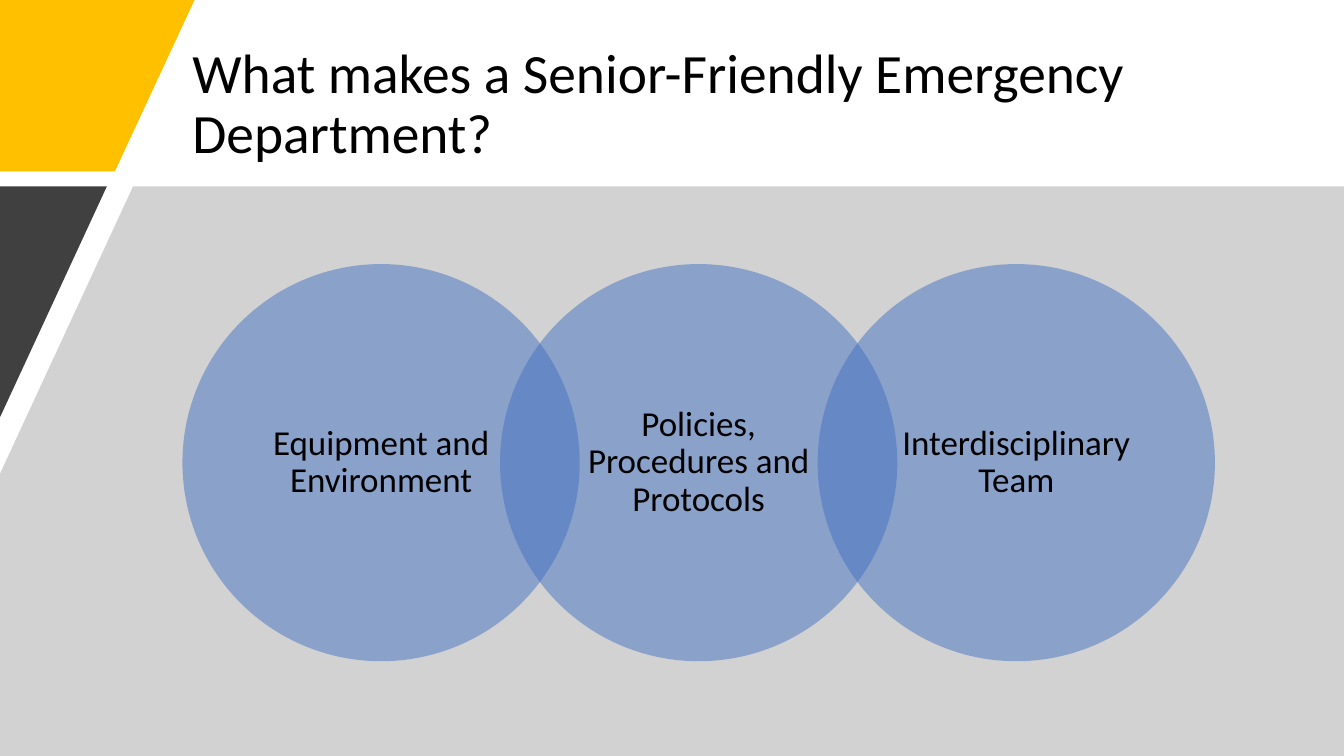
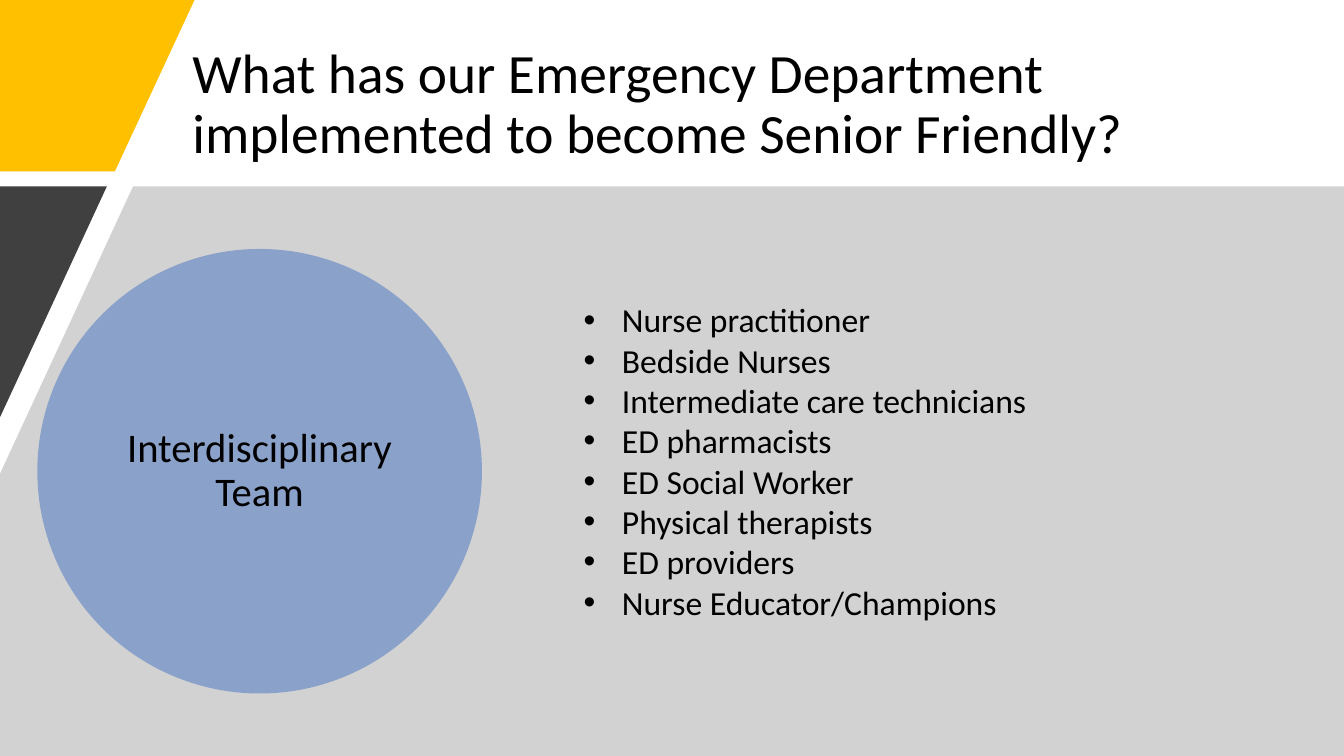
from dataclasses import dataclass

from pptx import Presentation
from pptx.dml.color import RGBColor
from pptx.enum.shapes import MSO_SHAPE
from pptx.enum.text import MSO_ANCHOR as Anchor, PP_ALIGN as Align
from pptx.oxml.ns import qn
from pptx.oxml.xmlchemy import OxmlElement
from pptx.shapes.autoshape import Shape
from pptx.slide import Slide
from pptx.text.text import _Paragraph as Paragraph
from pptx.util import Pt

EMU_PER_PX = 9144
WIDTH, HEIGHT = 1333, 750
FONT = "Calibri"
COLORS = {
    "accent": "FFC000",
    "panel": "A6A6A6",
    "wedge": "404040",
    "circle": "4472C4",
    "text": "000000",
}
BAND_TOP = 185
BULLET_INDENT = 38


@dataclass(frozen=True)
class Band:
    color: str
    points: tuple[tuple[int, int], ...]
    opacity: int = 100


@dataclass(frozen=True)
class Circle:
    text: str
    left: int
    top: int
    diameter: int
    font_size: int
    inset_x: int
    inset_y: int


BANDS = (
    Band("accent", ((0, 0), (193, 0), (114, 170), (0, 170))),
    Band("panel", ((132, BAND_TOP), (WIDTH, BAND_TOP), (WIDTH, HEIGHT), (0, HEIGHT), (0, 470)), 50),
    Band("wedge", ((0, BAND_TOP), (106, BAND_TOP), (0, 414))),
)
ELEMENTS = ("Equipment and Environment", "Policies, Procedures and Protocols", "Interdisciplinary Team")
TEAM = (
    "Nurse practitioner",
    "Bedside Nurses",
    "Intermediate care technicians",
    "ED pharmacists",
    "ED Social Worker",
    "Physical therapists",
    "ED providers",
    "Nurse Educator/Champions",
)


def px(length: int) -> int:
    return length * EMU_PER_PX


def paint(shape: Shape, color: str, opacity: int = 100) -> None:
    shape.shadow.inherit = False
    shape.line.fill.background()
    shape.fill.solid()
    shape.fill.fore_color.rgb = RGBColor.from_string(COLORS[color])
    if opacity < 100:
        alpha = OxmlElement("a:alpha")
        alpha.set("val", str(opacity * 1000))
        next(shape.element.spPr.iter(qn("a:srgbClr"))).append(alpha)


def style_paragraph(paragraph: Paragraph, text: str, size: float, line_spacing: float = 1.0) -> None:
    paragraph.text = text
    paragraph.line_spacing = line_spacing
    paragraph.font.name = FONT
    paragraph.font.size = Pt(size)
    paragraph.font.color.rgb = RGBColor.from_string(COLORS["text"])


def add_band(slide: Slide, band: Band) -> None:
    start, *rest = band.points
    builder = slide.shapes.build_freeform(*start, scale=EMU_PER_PX)
    builder.add_line_segments(rest, close=True)
    paint(builder.convert_to_shape(), band.color, band.opacity)


def add_title(slide: Slide, text: str) -> None:
    frame = slide.shapes.add_textbox(px(181), px(40), px(1024), px(130)).text_frame
    frame.word_wrap = True
    frame.vertical_anchor = Anchor.MIDDLE
    style_paragraph(frame.paragraphs[0], text, 39.6, 0.9)


def add_circle(slide: Slide, circle: Circle) -> None:
    diameter = px(circle.diameter)
    shape = slide.shapes.add_shape(MSO_SHAPE.OVAL, px(circle.left), px(circle.top), diameter, diameter)
    paint(shape, "circle", 50)
    frame = shape.text_frame
    frame.word_wrap = True
    frame.vertical_anchor = Anchor.MIDDLE
    frame.margin_left = frame.margin_right = px(circle.inset_x)
    frame.margin_top = frame.margin_bottom = px(circle.inset_y)
    paragraph = frame.paragraphs[0]
    style_paragraph(paragraph, circle.text, circle.font_size, 0.9)
    paragraph.alignment = Align.CENTER


def add_bullet(paragraph: Paragraph) -> None:
    properties = paragraph._p.get_or_add_pPr()
    properties.set("marL", str(px(BULLET_INDENT)))
    properties.set("indent", str(-px(BULLET_INDENT)))
    font = OxmlElement("a:buFont")
    font.set("typeface", "Arial")
    bullet = OxmlElement("a:buChar")
    bullet.set("char", "•")
    properties.insert_element_before(font, "a:tabLst", "a:defRPr", "a:extLst")
    properties.insert_element_before(bullet, "a:tabLst", "a:defRPr", "a:extLst")


def add_bullet_list(slide: Slide, items: tuple[str, ...]) -> None:
    frame = slide.shapes.add_textbox(px(569), px(292), px(656), px(404)).text_frame
    frame.word_wrap = True
    for index, item in enumerate(items):
        paragraph = frame.add_paragraph() if index else frame.paragraphs[0]
        style_paragraph(paragraph, item, 24)
        add_bullet(paragraph)


def add_framed_slide(presentation: Presentation, title: str) -> Slide:
    slide = presentation.slides.add_slide(presentation.slide_layouts[6])
    add_title(slide, title)
    for band in BANDS:
        add_band(slide, band)
    return slide


def main() -> None:
    presentation = Presentation()
    presentation.slide_width = px(WIDTH)
    presentation.slide_height = px(HEIGHT)

    overview = add_framed_slide(presentation, "What makes a Senior-Friendly Emergency Department?")
    for index, text in enumerate(ELEMENTS):
        add_circle(overview, Circle(text, 181 + index * 315, 262, 394, 25, 22, 3))

    team = add_framed_slide(
        presentation, "What has our Emergency Department implemented to become Senior Friendly?"
    )
    add_circle(team, Circle(ELEMENTS[-1], 37, 247, 441, 29, 24, 4))
    add_bullet_list(team, TEAM)

    presentation.save("out.pptx")


if __name__ == "__main__":
    main()
